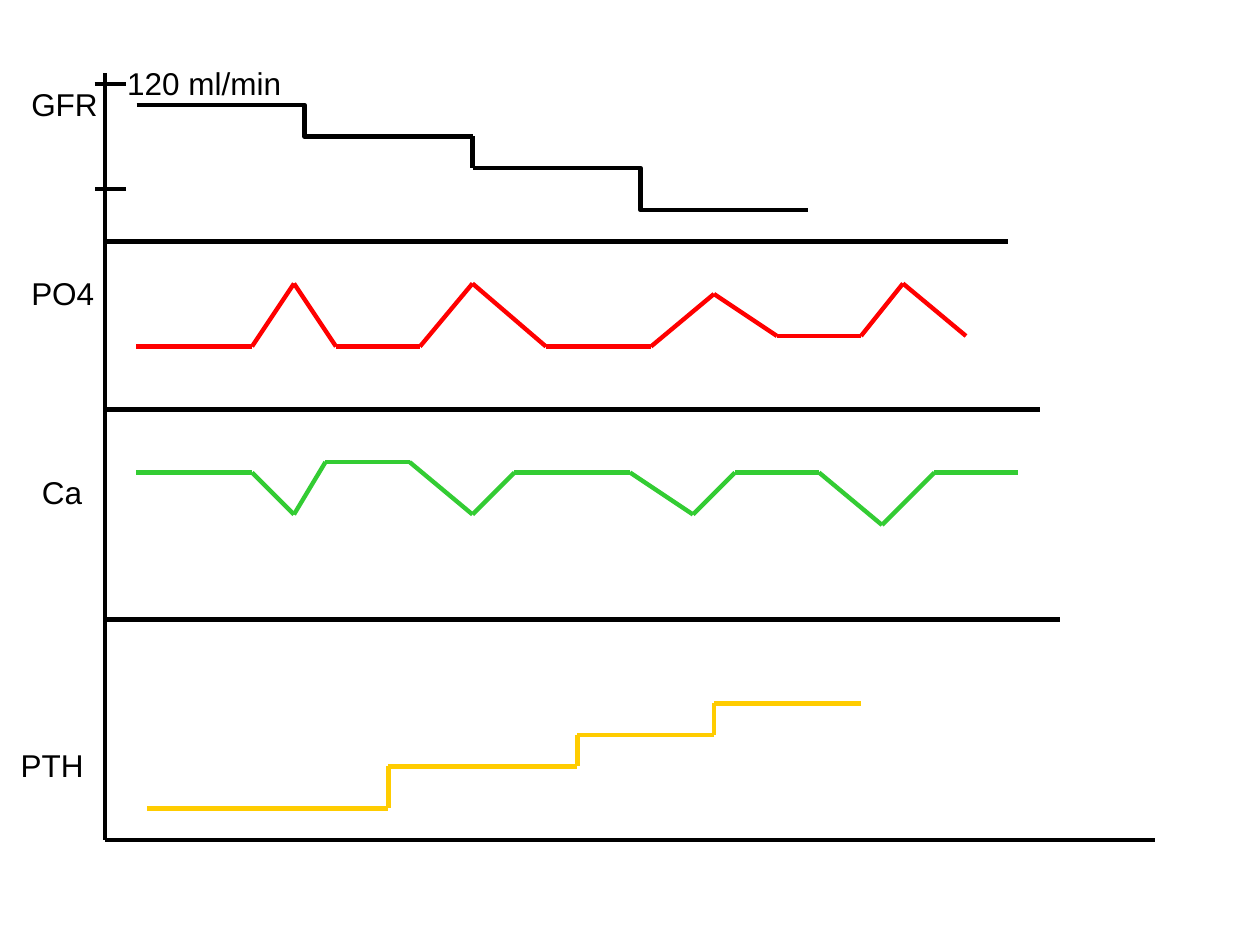
"""Build a slide of GFR, PO4, Ca and PTH traces over time."""
from itertools import pairwise

from lxml import etree
from pptx import Presentation
from pptx import util as u
from pptx.dml.color import RGBColor
from pptx.enum import shapes, text
from pptx.oxml.ns import qn

GRID = 6
BLACK, RED, GREEN, YELLOW = "000000", "FF0000", "33CC33", "FFCC00"


def color(value):
    return RGBColor.from_string(value)


def add_line(slide, start, end, line_color, kind=shapes.MSO_CONNECTOR.STRAIGHT):
    ends = [u.Pt(GRID * value) for value in (*start, *end)]
    connector = slide.shapes.add_connector(kind, *ends)
    connector.line.width = u.Pt(2.5)
    connector.line.color.rgb = color(line_color)
    properties = connector._element.find(qn("p:spPr"))
    etree.SubElement(properties, qn("a:effectLst"))


presentation = Presentation()
presentation.slide_width = u.Pt(720)
presentation.slide_height = u.Pt(540)
slide = presentation.slides.add_slide(presentation.slide_layouts[6])

axes = [
    ((10, 7), (10, 80)),
    ((10, 80), (110, 80)),
    ((9, 8), (12, 8)),
    ((12, 18), (9, 18)),
    ((10, 23), (96, 23)),
    ((10, 39), (99, 39)),
    ((10, 59), (101, 59)),
]
for start, end in axes:
    add_line(slide, start, end, BLACK)

gfr_steps = [((13, 10), (45, 13)), ((45, 16), (77, 20))]
for start, end in gfr_steps:
    add_line(slide, start, end, BLACK, shapes.MSO_CONNECTOR.ELBOW)
add_line(slide, (45, 13), (45, 16), BLACK)

traces = {
    RED: [(13, 33), (24, 33), (28, 27), (32, 33), (40, 33), (45, 27), (52, 33),
          (62, 33), (68, 28), (74, 32), (82, 32), (86, 27), (92, 32)],
    GREEN: [(13, 45), (24, 45), (28, 49), (31, 44), (39, 44), (45, 49), (49, 45),
            (60, 45), (66, 49), (70, 45), (78, 45), (84, 50), (89, 45), (97, 45)],
    YELLOW: [(14, 77), (37, 77), (37, 73), (55, 73), (55, 70), (68, 70),
             (68, 67), (82, 67)],
}
for trace_color, points in traces.items():
    for start, end in pairwise(points):
        add_line(slide, start, end, trace_color)

labels = [
    ("GFR", 10.8, 45, 52.5),
    ("120 ml/min", 65.5, 33, 102.2),
    ("PO4", 10.8, 153, 50.4),
    ("Ca", 16.8, 267, 37.4),
    ("PTH", 4.8, 423, 50.4),
]
frame_format = {"word_wrap": False, "auto_size": text.MSO_AUTO_SIZE.SHAPE_TO_FIT_TEXT}
font_format = {"name": "Arial", "size": u.Pt(18)}
for label, left, top, width in labels:
    shape = slide.shapes.add_textbox(u.Pt(left), u.Pt(top), u.Pt(width), u.Pt(29))
    for name, value in frame_format.items():
        setattr(shape.text_frame, name, value)
    run = shape.text_frame.paragraphs[0].add_run()
    run.text = label
    for name, value in font_format.items():
        setattr(run.font, name, value)
    run.font.color.rgb = color(BLACK)

presentation.save("out.pptx")
